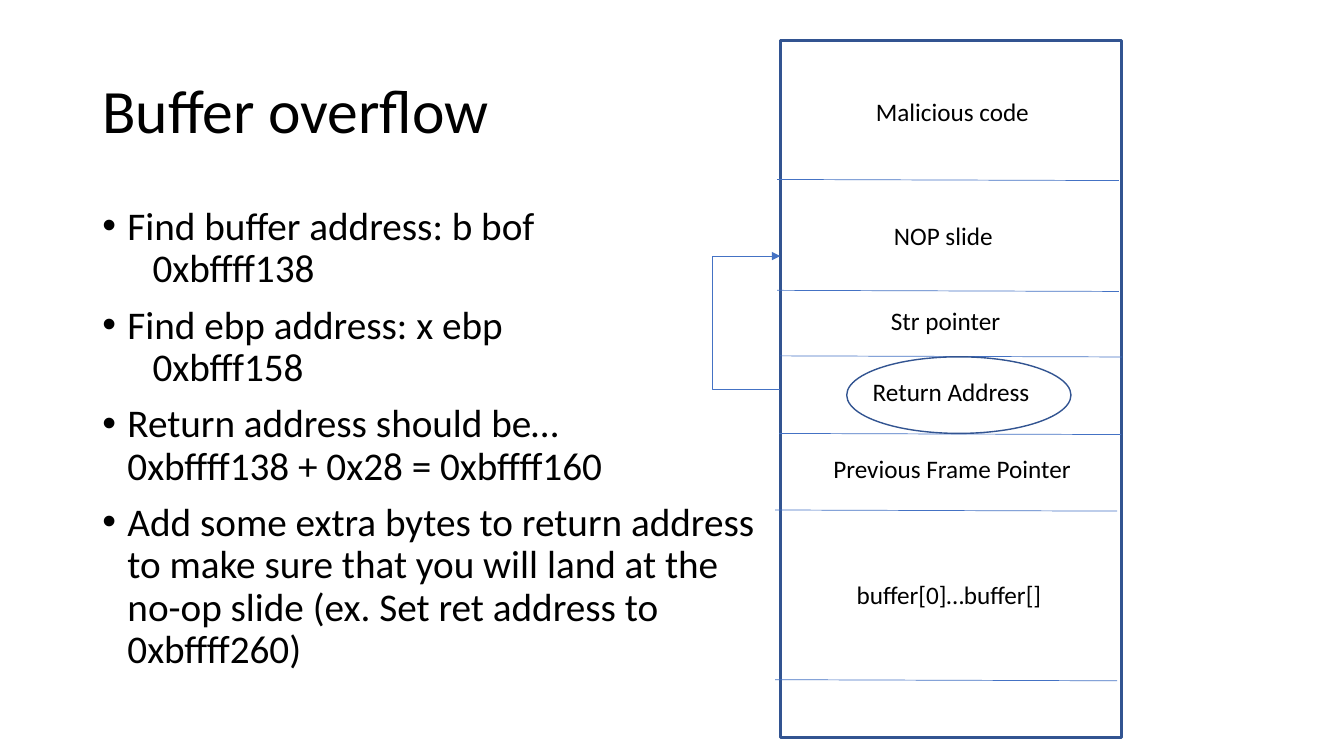
import lxml.etree
import pptx
import pptx.dml.color
import pptx.enum.shapes
import pptx.enum.text
import pptx.oxml.ns
import pptx.util

Pt = pptx.util.Pt
qn = pptx.oxml.ns.qn
Shape = pptx.enum.shapes.MSO_SHAPE
Connector = pptx.enum.shapes.MSO_CONNECTOR
Anchor = pptx.enum.text.MSO_ANCHOR


def color(value):
    return pptx.dml.color.RGBColor.from_string(value)


def add_xml(parent, tag, **attributes):
    lxml.etree.SubElement(parent, qn(tag), attributes)


class StackPage:
    font = "Calibri"
    ink = "000000"
    outline = "325491"
    accent = "4472C4"

    def __init__(self, deck):
        self.shapes = deck.slides.add_slide(deck.slide_layouts[6]).shapes

    def text(self, area, paragraphs, size, wrap=True, anchor=Anchor.TOP, bullet=False, **formats):
        box = self.shapes.add_textbox(*map(Pt, area))
        frame = box.text_frame
        frame.word_wrap, frame.vertical_anchor = wrap, anchor
        for index, content in enumerate(paragraphs):
            para = frame.paragraphs[0] if index == 0 else frame.add_paragraph()
            para.text = content
            for name, value in formats.items():
                setattr(para, name, value)
            for span in para.runs:
                for name, value in {"name": self.font, "size": Pt(size)}.items():
                    setattr(span.font, name, value)
                span.font.color.rgb = color(self.ink)
            if bullet:
                properties = para._p.get_or_add_pPr()
                properties.set("marL", str(Pt(18)))
                properties.set("indent", str(Pt(-18)))
                add_xml(properties, "a:buFont", typeface="Arial")
                add_xml(properties, "a:buChar", char="•")

    def outlined(self, kind, area, weight):
        shape = self.shapes.add_shape(kind, *map(Pt, area))
        shape.shadow.inherit = False
        shape.fill.background()
        shape.line.color.rgb = color(self.outline)
        shape.line.width = Pt(weight)
        return shape

    def line(self, start, end, kind=Connector.STRAIGHT, arrow=False):
        connector = self.shapes.add_connector(kind, *map(Pt, (*start, *end)))
        connector.line.color.rgb = color(self.accent)
        connector.line.width = Pt(0.5)
        properties = connector._element.spPr
        if arrow:
            add_xml(properties.find(qn("a:ln")), "a:tailEnd", type="triangle")
        add_xml(properties, "a:effectLst")
        return connector

    def corner(self, start, end):
        """Draw a connector with a single right-angle bend."""
        connector = self.line(start, end, Connector.ELBOW)
        connector._element.spPr.find(qn("a:prstGeom")).set("prst", "bentConnector2")
        return connector


STEPS = [
    "Find buffer address: b bof\v\t0xbffff138",
    "Find ebp address: x ebp\v\t0xbfff158",
    "Return address should be…\v0xbffff138 + 0x28 = 0xbffff160",
    "Add some extra bytes to return address\vto make sure that you will land at the\v"
    "no-op slide (ex. Set ret address to\v0xbffff260)",
]
# Left, top and width of each label in the stack
LABELS = {
    "Malicious code": (618.5, 65.5, 125.3),
    "NOP slide": (631.4, 154.1, 85.7),
    "Str pointer": (629.3, 214.6, 93.6),
    "Return Address": (616.3, 265, 127.4),
    "Previous Frame Pointer": (588.2, 320.4, 185.8),
    "buffer[0]…buffer[]": (604.8, 410.4, 148.3),
}
# Left end of each divider between stack regions
DIVIDERS = [(555.1, 128.2), (555.1, 207.4), (557.3, 254.2),
            (556.6, 309.6), (553.7, 364.3), (553.7, 485.5)]
DIVIDER_WIDTH, DIVIDER_DROP = 244.2, 0.8
STACK_LEFT, STACK_MIDDLE = 557.3, 277.9
LOOP_LEFT, LANDING = 509, 182.9


def main():
    deck = pptx.Presentation()
    deck.slide_width, deck.slide_height = Pt(960), Pt(540)
    page = StackPage(deck)
    page.text((66, 28.8, 828, 104.4), ["Buffer overflow"], 44, anchor=Anchor.MIDDLE, line_spacing=0.9)
    page.text((66, 144, 828, 342.7), STEPS, 28, bullet=True, line_spacing=0.9, space_before=Pt(10))

    stack = page.outlined(Shape.RECTANGLE, (STACK_LEFT, 28.8, 244.1, 498.2), 2.25)
    for left, top in DIVIDERS:
        page.line((left, top), (left + DIVIDER_WIDTH, top + DIVIDER_DROP))
    for label, (left, top, width) in LABELS.items():
        page.text((left, top, width, 29), [label], 18, wrap=False)

    page.outlined(Shape.OVAL, (604.8, 254.9, 160.2, 54.7), 1)
    loop = page.corner((STACK_LEFT, STACK_MIDDLE), (LOOP_LEFT, LANDING))
    loop.begin_connect(stack, 1)
    page.line((LOOP_LEFT, LANDING), (STACK_LEFT, LANDING), arrow=True)
    deck.save("out.pptx")


if __name__ == "__main__":
    main()
